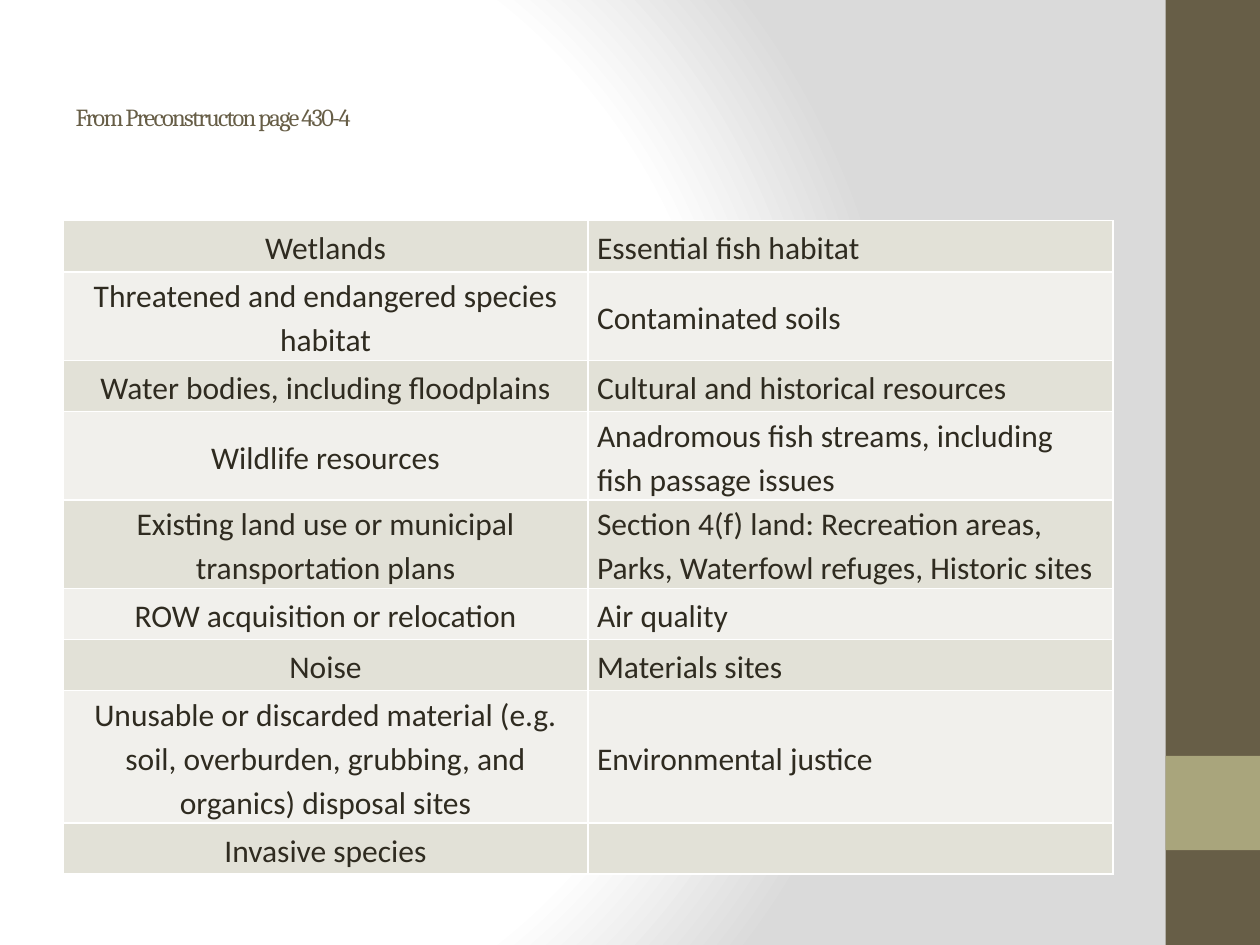
import lxml.etree
import pptx
import pptx.dml.color
import pptx.enum.shapes
import pptx.enum.text
import pptx.oxml
import pptx.oxml.ns
import pptx.util

Cm = pptx.util.Cm
Pt = pptx.util.Pt
ALIGN = pptx.enum.text.PP_ALIGN
MIDDLE = pptx.enum.text.MSO_ANCHOR.MIDDLE

OLIVE = "675E47"
SAGE = "A9A57C"
INK = "2F2B20"
BANDS = ("E2E1D7", "F1F0EC")

TOPICS = [
    ("Wetlands", "Essential fish habitat"),
    ("Threatened and endangered species habitat", "Contaminated soils"),
    ("Water bodies, including floodplains", "Cultural and historical resources"),
    ("Wildlife resources", "Anadromous fish streams, including fish passage issues"),
    ("Existing land use or municipal transportation plans",
     "Section 4(f) land: Recreation areas, Parks, Waterfowl refuges, Historic sites"),
    ("ROW acquisition or relocation", "Air quality"),
    ("Noise", "Materials sites"),
    ("Unusable or discarded material (e.g. soil, overburden, grubbing, and organics) disposal sites",
     "Environmental justice"),
    ("Invasive species", ""),
]


def rgb(value):
    return pptx.dml.color.RGBColor.from_string(value)


def parse_drawing(tag, content):
    namespace = pptx.oxml.ns.nsdecls("a")
    return pptx.oxml.parse_xml(f"<a:{tag} {namespace}>{content}</a:{tag}>")


def write_text(frame, text, *, size, font, color, align=ALIGN.LEFT, line_spacing=None, tracking=None):
    paragraph = frame.paragraphs[0]
    paragraph.alignment = align
    paragraph.line_spacing = line_spacing
    run = paragraph.add_run()
    run.text = text
    run.font.size = Pt(size)
    run.font.name = font
    run.font.color.rgb = rgb(color)
    if tracking is not None:
        run.font._element.set("spc", str(tracking * 100))


def paint_background(slide):
    fill = slide.background.fill
    fill.gradient()
    default = slide.element.find(".//" + pptx.oxml.ns.qn("a:gradFill"))
    stops = "".join(
        f'<a:gs pos="{percent * 1000}"><a:srgbClr val="{color}"/></a:gs>'
        for percent, color in ((0, "FFFFFF"), (75, "FFFFFF"), (100, "DADADA"))
    )
    glow = parse_drawing(
        "gradFill",
        f'<a:gsLst>{stops}</a:gsLst><a:path path="circle">'
        '<a:fillToRect l="20000" t="50000" r="100000" b="50000"/></a:path>',
    )
    default.getparent().replace(default, glow)


def add_side_block(slide, top, height, color):
    block = slide.shapes.add_shape(
        pptx.enum.shapes.MSO_SHAPE.RECTANGLE, Cm(23.5), top, Cm(1.9), height)
    block.shadow.inherit = False
    block.fill.solid()
    block.fill.fore_color.rgb = rgb(color)
    block.line.fill.background()


def place_title(slide, text):
    title = slide.shapes.title
    title.left, title.top, title.width, title.height = Cm(1.27), Cm(0.76), Cm(21.17), Cm(3.18)
    title.text_frame.vertical_anchor = MIDDLE
    write_text(title.text_frame, text, size=14, font="Cambria", color=OLIVE, tracking=-1)


def border_cell(cell):
    properties = cell._tc.get_or_add_tcPr()
    for position, side in enumerate(("lnL", "lnR", "lnT", "lnB")):
        edge = parse_drawing(side, '<a:solidFill><a:srgbClr val="FFFFFF"/></a:solidFill>')
        edge.set("w", str(Pt(1)))
        properties.insert(position, edge)


def fill_cell(cell, text, band, align):
    cell.fill.solid()
    cell.fill.fore_color.rgb = rgb(band)
    border_cell(cell)
    if text:
        cell.vertical_anchor = MIDDLE
        cell.margin_left = cell.margin_right = Cm(0.18)
        cell.margin_top = cell.margin_bottom = 0
        write_text(cell.text_frame, text, size=18, font="Calibri", color=INK,
                   align=align, line_spacing=1.15)


def add_topics_table(slide):
    row_height = Cm(1.03)
    table = slide.shapes.add_table(
        len(TOPICS), 2, Cm(1.27), Cm(4.45), Cm(21.17), row_height * len(TOPICS)).table
    table.first_row = False
    table.horz_banding = False
    for row_index, topics in enumerate(TOPICS):
        table.rows[row_index].height = row_height
        band = BANDS[row_index % 2]
        for column_index, (topic, align) in enumerate(zip(topics, (ALIGN.CENTER, ALIGN.LEFT))):
            fill_cell(table.cell(row_index, column_index), topic, band, align)


def main():
    deck = pptx.Presentation()
    deck.slide_width, deck.slide_height = Cm(25.4), Cm(19.05)
    slide = deck.slides.add_slide(deck.slide_layouts[5])
    paint_background(slide)
    add_side_block(slide, 0, deck.slide_height, OLIVE)
    add_side_block(slide, Cm(15.24), Cm(1.9), SAGE)
    place_title(slide, "From Preconstructon page 430-4")
    add_topics_table(slide)
    deck.save("out.pptx")


if __name__ == "__main__":
    main()
